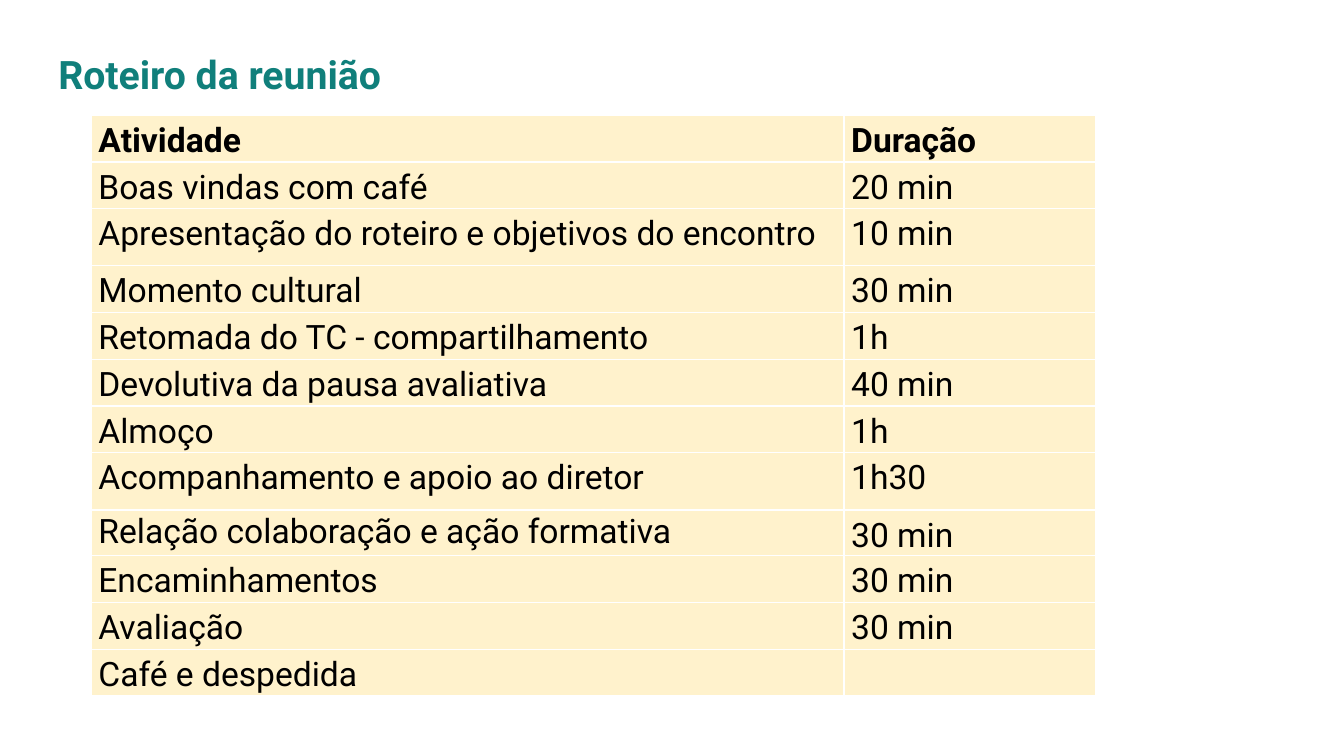
"""Build the meeting agenda slide with a table of activities and durations."""
from lxml.etree import SubElement
from pptx import Presentation
from pptx.dml.color import RGBColor
from pptx.enum.text import MSO_ANCHOR, PP_ALIGN
from pptx.oxml.ns import qn
from pptx.util import Cm, Pt

TITLE = "Roteiro da reunião"
AGENDA = [
    ("Atividade", "Duração"),
    ("Boas vindas com café", "20 min"),
    ("Apresentação do roteiro e objetivos do encontro", "10 min"),
    ("Momento cultural", "30 min"),
    ("Retomada do TC - compartilhamento", "1h"),
    ("Devolutiva da pausa avaliativa", "40 min"),
    ("Almoço", "1h"),
    ("Acompanhamento e apoio ao diretor", "1h30"),
    ("Relação colaboração e ação formativa", "30 min"),
    ("Encaminhamentos", "30 min"),
    ("Avaliação", "30 min"),
    ("Café e despedida", ""),
]
COL_WIDTHS = (18.97, 6.35)
ROW_HEIGHT = 1.18
SPECIAL_HEIGHTS = {2: 1.43, 7: 1.44, 8: 1.15}
TIGHT_CELL = (8, 0)
COLORS = {"title": "107F7B", "text": "000000", "cell": "FFF2CC", "border": "FFFFFF"}
FONT = "Roboto"


def set_font(p, size, color, bold):
    p.font.name = FONT
    p.font.size = Pt(size)
    p.font.bold = bold
    p.font.color.rgb = RGBColor.from_string(COLORS[color])


def set_borders(cell):
    tc_pr = cell._tc.get_or_add_tcPr()
    for i, side in enumerate(("lnL", "lnR", "lnT", "lnB")):
        ln = SubElement(tc_pr, qn(f"a:{side}"), w=str(Pt(1)))
        fill = SubElement(ln, qn("a:solidFill"))
        SubElement(fill, qn("a:srgbClr"), val=COLORS["border"])
        tc_pr.insert(i, ln)


def add_title(slide):
    sp = slide.shapes.title
    sp.left, sp.top, sp.width, sp.height = Cm(1.14), Cm(0.84), Cm(30.53), Cm(2.06)
    tf = sp.text_frame
    tf.text = TITLE
    tf.vertical_anchor = MSO_ANCHOR.MIDDLE
    tf.margin_left = tf.margin_right = tf.margin_top = tf.margin_bottom = Cm(0.33)
    p = tf.paragraphs[0]
    p.alignment = PP_ALIGN.LEFT
    set_font(p, 28, "title", True)


def add_agenda(slide):
    heights = [SPECIAL_HEIGHTS.get(i, ROW_HEIGHT) for i in range(len(AGENDA))]
    table = slide.shapes.add_table(
        len(AGENDA), len(COL_WIDTHS), Cm(2.3), Cm(2.9),
        Cm(sum(COL_WIDTHS)), Cm(sum(heights))).table
    table.first_row = table.horz_banding = False
    for col, width in zip(table.columns, COL_WIDTHS):
        col.width = Cm(width)
    for r, (height, texts) in enumerate(zip(heights, AGENDA)):
        table.rows[r].height = Cm(height)
        for c, text in enumerate(texts):
            cell = table.cell(r, c)
            cell.text = text
            cell.margin_left = cell.margin_right = Cm(0.18)
            cell.margin_top = cell.margin_bottom = 0
            cell.fill.solid()
            cell.fill.fore_color.rgb = RGBColor.from_string(COLORS["cell"])
            set_borders(cell)
            p = cell.text_frame.paragraphs[0]
            p.line_spacing = 1.07 if (r, c) == TIGHT_CELL else 1.15
            set_font(p, 24, "text", r == 0)


def main():
    prs = Presentation()
    prs.slide_width, prs.slide_height = Cm(33.87), Cm(19.05)
    slide = prs.slides.add_slide(prs.slide_layouts[5])
    add_title(slide)
    add_agenda(slide)
    prs.save("out.pptx")


if __name__ == "__main__":
    main()
